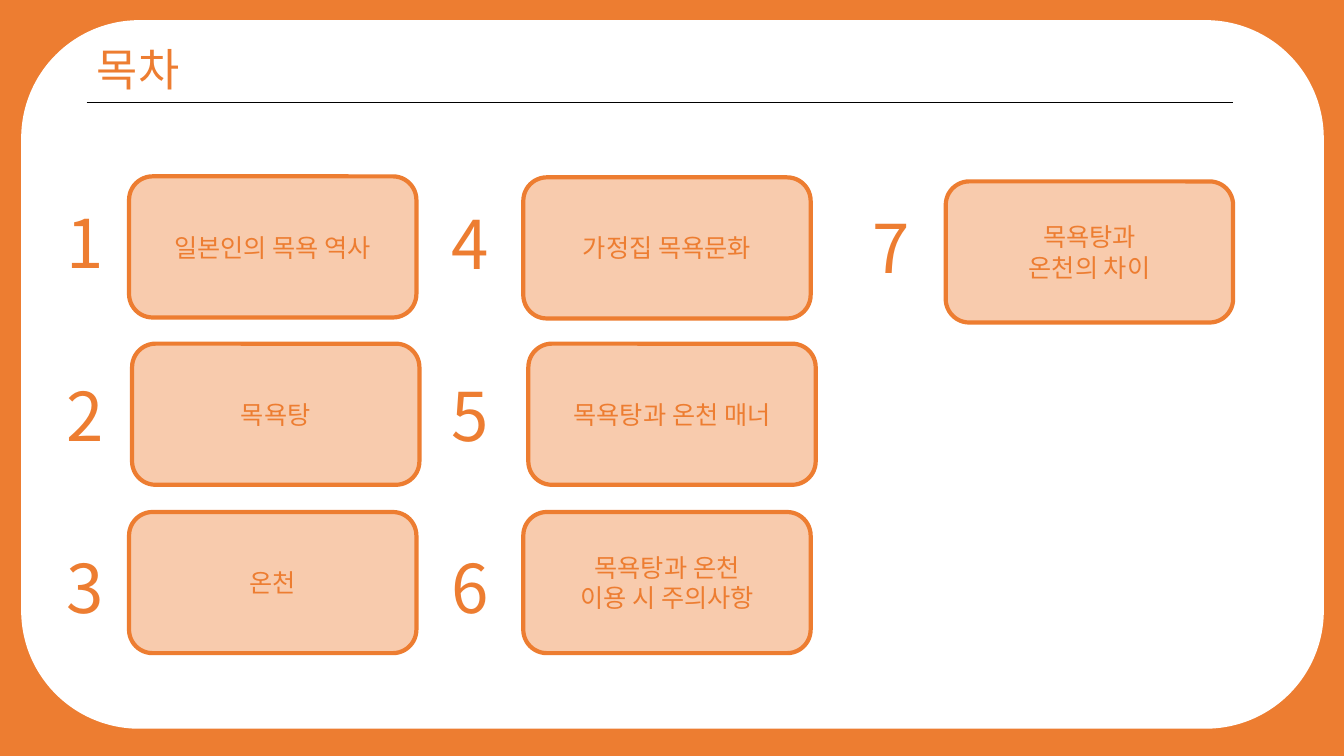
from dataclasses import dataclass

from lxml import etree
from pptx import Presentation, util as u
from pptx.dml.color import RGBColor
from pptx.enum import shapes, text
from pptx.oxml import ns


@dataclass(frozen=True)
class Theme:
    font: str = "Noto Sans CJK KR"
    accent: RGBColor = RGBColor(0xED, 0x7D, 0x31)
    card: RGBColor = RGBColor(0xF8, 0xCB, 0xAD)
    panel: RGBColor = RGBColor(0xFF, 0xFF, 0xFF)
    rule: RGBColor = RGBColor(0, 0, 0)
    title_size: int = 32
    number_size: int = 48
    label_size: int = 18


THEME = Theme()
ROWS = 3
NUMBER_LEFTS = (0.5, 4.32, 8.5)      # one per column
NUMBER_DROPS = (0.2, 0.25, 0.29)     # below the card top, one per row
CARD_SIZE = (2.85, 1.4)
# Label and the left and top of its card, down each column in turn
TOPICS = (
    ("일본인의 목욕 역사", 1.28, 1.75),
    ("목욕탕", 1.31, 3.41),
    ("온천", 1.28, 5.08),
    ("가정집 목욕문화", 5.19, 1.76),
    ("목욕탕과 온천 매너", 5.24, 3.41),
    ("목욕탕과 온천\n이용 시 주의사항", 5.19, 5.08),
    ("목욕탕과\n온천의 차이", 9.38, 1.8),
)


def inches(*lengths):
    return [u.Inches(n) for n in lengths]


def write(tf, words, size, align, anchor):
    tf.text = words
    tf.word_wrap = True
    tf.auto_size = text.MSO_AUTO_SIZE.NONE
    tf.vertical_anchor = anchor
    for p in tf.paragraphs:
        p.alignment = align
        for r in p.runs:
            r.font.name = THEME.font
            r.font.size = u.Pt(size)
            r.font.color.rgb = THEME.accent
            ea = etree.SubElement(r.font._element, ns.qn("a:ea"))
            ea.set("typeface", THEME.font)


def add_rounded(parent, box, fill):
    sp = parent.add_shape(shapes.MSO_SHAPE.ROUNDED_RECTANGLE, *inches(*box))
    sp.shadow.inherit = False
    sp.fill.solid()
    sp.fill.fore_color.rgb = fill
    sp.line.fill.background()
    return sp


def add_background(s, box):
    s.background.fill.solid()
    s.background.fill.fore_color.rgb = THEME.accent
    add_rounded(s.shapes, box, THEME.panel)


def add_heading(s, words, box):
    """Place the title at the top left of the box and a rule along its bottom."""
    left, top, width, height = box
    title = s.shapes.title
    title.left, title.top, title.width, title.height = inches(left, top, 3.54, 0.64)
    write(title.text_frame, words, THEME.title_size,
          text.PP_ALIGN.LEFT, text.MSO_ANCHOR.TOP)
    # The title stands in front of the panel
    s.shapes._spTree.append(title._element)

    rule = s.shapes.add_connector(
        shapes.MSO_CONNECTOR.STRAIGHT,
        *inches(left, top + height, left + width, top + height))
    rule.line.color.rgb = THEME.rule
    rule.line.width = u.Pt(0.5)
    etree.SubElement(rule._element.spPr, ns.qn("a:effectLst"))


def add_topic(s, number, label, box, number_box):
    group = s.shapes.add_group_shape()
    card = add_rounded(group.shapes, box, THEME.card)
    card.line.color.rgb = THEME.accent
    card.line.width = u.Pt(3)
    write(card.text_frame, label, THEME.label_size,
          text.PP_ALIGN.CENTER, text.MSO_ANCHOR.MIDDLE)
    tb = group.shapes.add_textbox(*inches(*number_box))
    write(tb.text_frame, str(number), THEME.number_size,
          text.PP_ALIGN.CENTER, text.MSO_ANCHOR.TOP)


def add_contents_slide(prs):
    s = prs.slides.add_slide(prs.slide_layouts[5])
    add_background(s, (0.21, 0.2, 12.92, 7.03))
    add_heading(s, "목차", (0.86, 0.36, 11.37, 0.66))
    for i, (label, left, top) in enumerate(TOPICS):
        column, row = divmod(i, ROWS)
        number_box = (NUMBER_LEFTS[column], top + NUMBER_DROPS[row], 0.68, 0.91)
        add_topic(s, i + 1, label, (left, top, *CARD_SIZE), number_box)


def main():
    prs = Presentation()
    prs.slide_width, prs.slide_height = inches(13.33, 7.5)
    add_contents_slide(prs)
    prs.save("out.pptx")


if __name__ == "__main__":
    main()
